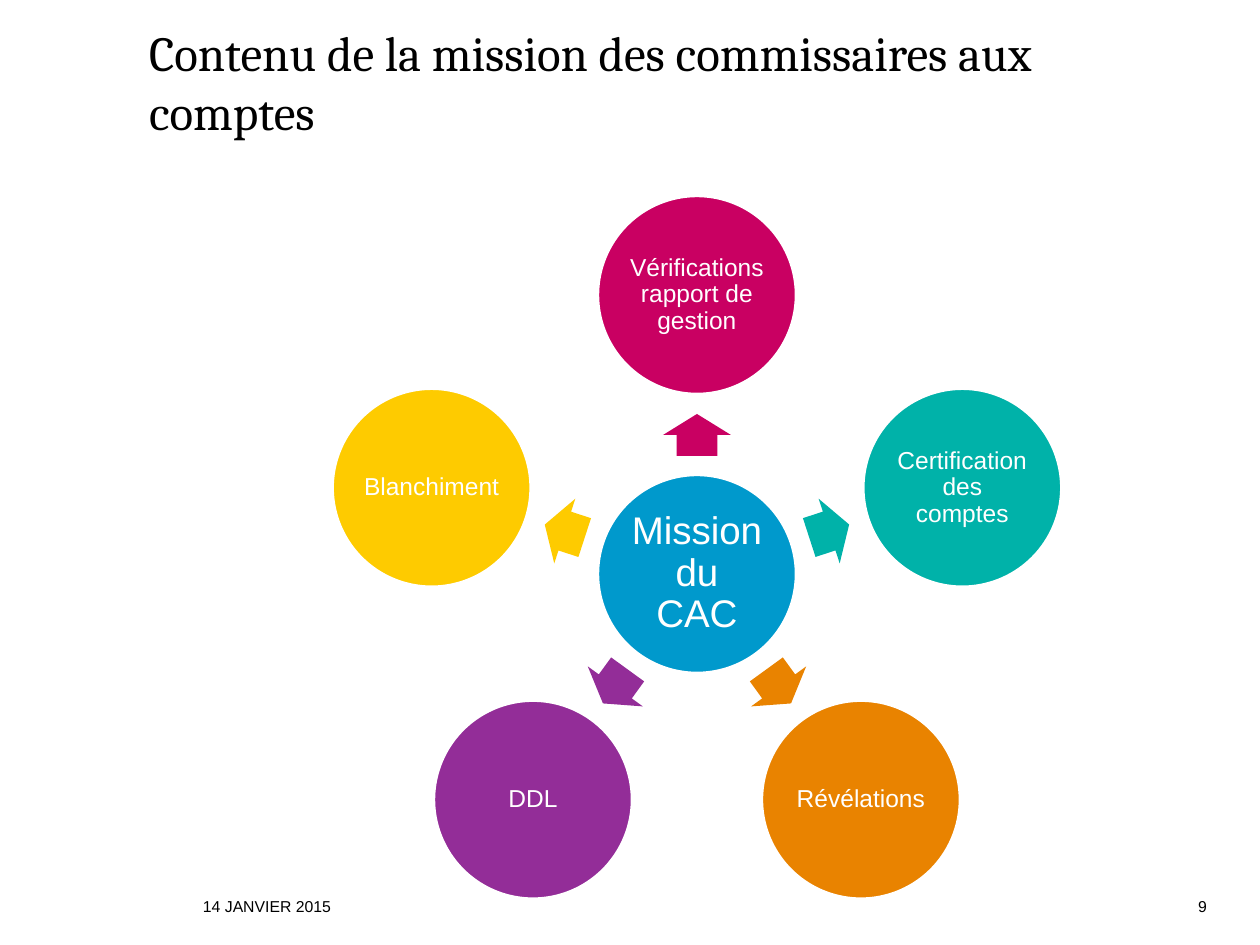
from math import cos, radians, sin

from pptx import Presentation
from pptx.dml.color import RGBColor
from pptx.enum.shapes import MSO_SHAPE as SHAPE
from pptx.enum.text import MSO_ANCHOR as ANCHOR, PP_ALIGN as ALIGN
from pptx.util import Pt

PX = 914400 // 126  # EMU per px

BLACK = RGBColor(0x00, 0x00, 0x00)
WHITE = RGBColor(0xFF, 0xFF, 0xFF)
BLUE = RGBColor(0x00, 0x99, 0xCC)
MAGENTA = RGBColor(0xC9, 0x00, 0x62)
TEAL = RGBColor(0x00, 0xB2, 0xA9)
ORANGE = RGBColor(0xE9, 0x83, 0x00)
PURPLE = RGBColor(0x93, 0x2D, 0x98)
YELLOW = RGBColor(0xFE, 0xCB, 0x00)

CENTER_X, CENTER_Y = 697, 574
DIAMETER = 199
ORBIT = 279
ARROW_ORBIT = 139
ARROW_LENGTH, ARROW_WIDTH = 42, 68

TOPICS = [  # clockwise from the top
    ("Vérifications rapport de gestion", MAGENTA),
    ("Certification des comptes", TEAL),
    ("Révélations", ORANGE),
    ("DDL", PURPLE),
    ("Blanchiment", YELLOW),
]


def set_text(sp, text, size, color, font="Arial", align=ALIGN.LEFT,
             anchor=ANCHOR.BOTTOM, inset=0):
    tf = sp.text_frame
    tf.word_wrap = True
    tf.vertical_anchor = anchor
    tf.margin_left = tf.margin_right = inset * PX
    tf.margin_top = tf.margin_bottom = inset * PX
    p = tf.paragraphs[0]
    p.text = text
    p.alignment = align
    p.font.name = font
    p.font.size = Pt(size)
    p.font.color.rgb = color
    return p


def add_text(slide, x, y, w, h, text, size, **style):
    sp = slide.shapes.add_textbox(x * PX, y * PX, w * PX, h * PX)
    set_text(sp, text, size, BLACK, **style)


def add_centered(slide, kind, cx, cy, w, h, color):
    """Add a filled shape around the point (cx, cy)."""
    sp = slide.shapes.add_shape(kind, round((cx - w / 2) * PX),
                                round((cy - h / 2) * PX), w * PX, h * PX)
    sp.shadow.inherit = False
    sp.fill.solid()
    sp.fill.fore_color.rgb = color
    return sp


def add_circle(slide, cx, cy, text, color, size=14, inset=2):
    sp = add_centered(slide, SHAPE.OVAL, cx, cy, DIAMETER, DIAMETER, color)
    sp.line.color.rgb = WHITE
    sp.line.width = Pt(2)
    p = set_text(sp, text, size, WHITE, align=ALIGN.CENTER,
                 anchor=ANCHOR.MIDDLE, inset=inset)
    p.line_spacing = 0.9


def add_arrow(slide, cx, cy, angle, color):
    sp = add_centered(slide, SHAPE.RIGHT_ARROW, cx, cy,
                      ARROW_LENGTH, ARROW_WIDTH, color)
    sp.line.fill.background()
    sp.adjustments[0] = 0.6
    sp.adjustments[1] = 0.5
    sp.rotation = angle % 360


def on_orbit(radius, angle):
    return (CENTER_X + radius * cos(radians(angle)),
            CENTER_Y + radius * sin(radians(angle)))


def add_radial_diagram(slide):
    add_circle(slide, CENTER_X, CENTER_Y, "Mission du CAC", BLUE,
               size=22, inset=4)
    for i, (text, color) in enumerate(TOPICS):
        angle = -90 + i * 360 / len(TOPICS)
        add_arrow(slide, *on_orbit(ARROW_ORBIT, angle), angle, color)
        add_circle(slide, *on_orbit(ORBIT, angle), text, color)


def main():
    prs = Presentation()
    prs.slide_width = 1260 * PX
    prs.slide_height = 945 * PX
    slide = prs.slides.add_slide(prs.slide_layouts[6])
    add_text(slide, 149, 0, 1040, 140,
             "Contenu de la mission des commissaires aux comptes", 28,
             font="Cambria")
    add_radial_diagram(slide)
    add_text(slide, 203, 891, 893, 25, "14 JANVIER 2015", 9)
    add_text(slide, 1106, 891, 101, 25, "9", 9, align=ALIGN.RIGHT)
    prs.save("out.pptx")


if __name__ == "__main__":
    main()
